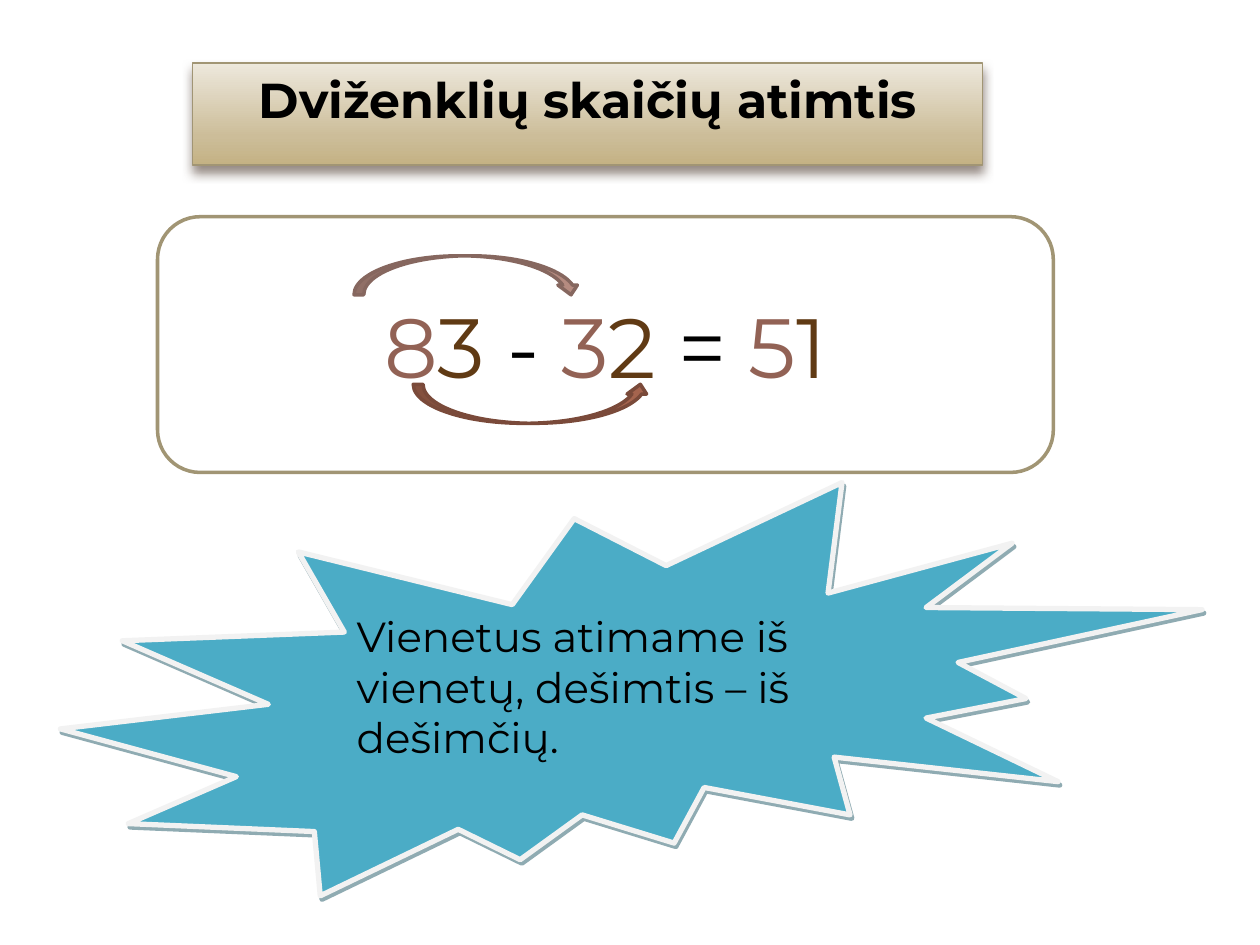
from lxml.etree import SubElement
from pptx import Presentation
from pptx.dml.color import RGBColor
from pptx.enum.shapes import MSO_SHAPE as SHAPE
from pptx.enum.text import MSO_ANCHOR as ANCHOR, MSO_AUTO_SIZE as AUTO_SIZE, PP_ALIGN as ALIGN
from pptx.oxml.ns import qn
from pptx.util import Pt

FONT = "Montserrat"
COLORS = {
    "text": "000000", "tens": "926255", "units": "603A14",
    "frame": "A19574", "panel": "FFFFFF",
    "burst": "4BACC6", "burst_line": "F2F2F2", "burst_shadow": "205867",
    "title_shadow": "4E3B30",
    "top_arrow": "B58B80", "top_arrow_line": "86675F",
    "bottom_arrow": "A5644E", "bottom_arrow_line": "7A4A3A",
}
TITLE_STOPS = [(0, "EDE8DC"), (72, "CCBD99"), (100, "C4B284")]

TITLE = [("Dviženklių skaičių atimtis", "text")]
RULE = [("Vienetus atimame iš vienetų, dešimtis – iš dešimčių.", "text")]
EQUATION = [("8", "tens"), ("3 ", "units"), ("- ", "text"), ("3", "tens"),
            ("2", "units"), (" = ", "text"), ("5", "tens"), ("1", "units")]

# left, top, width, height in points
TITLE_BOX = (110.16, 36, 451.44, 58.32)
BURST_BOX = (34.56, 275.76, 652.32, 236.16)
PANEL_BOX = (90, 123.84, 511.92, 146.16)
ARROWS = [
    (SHAPE.CURVED_DOWN_ARROW, (202.32, 146.16, 129.6, 22.32), "top_arrow"),
    (SHAPE.CURVED_UP_ARROW, (236.16, 219.6, 135.36, 22.32), "bottom_arrow"),
]


def rgb(name):
    return RGBColor.from_string(COLORS[name])


def set_line(sp, color, width):
    sp.line.color.rgb = rgb(color)
    sp.line.width = Pt(width)


def add_shape(slide, kind, box, fill, line, width):
    sp = slide.shapes.add_shape(kind, *map(Pt, box))
    sp.shadow.inherit = False
    sp.fill.solid()
    sp.fill.fore_color.rgb = rgb(fill)
    set_line(sp, line, width)
    return sp


def write(sp, runs, size, bold=False, align=ALIGN.LEFT, anchor=ANCHOR.TOP):
    """Fill the shape with one paragraph of (text, colour name) runs."""
    tf = sp.text_frame
    tf.word_wrap = True
    tf.auto_size = AUTO_SIZE.NONE
    tf.vertical_anchor = anchor
    p = tf.paragraphs[0]
    p.alignment = align
    for text, color in runs:
        r = p.add_run()
        r.text = text
        r.font.name = FONT
        r.font.size = Pt(size)
        r.font.bold = bold
        r.font.color.rgb = rgb(color)


def add_color(parent, value):
    return SubElement(parent, qn("a:srgbClr"), val=value)


def add_shadow(sp, color, alpha, blur, distance, angle):
    sp.shadow.inherit = False
    effects = sp._element.spPr.find(qn("a:effectLst"))
    shadow = SubElement(effects, qn("a:outerShdw"), blurRad=str(Pt(blur)),
                        dist=str(Pt(distance)), dir=str(angle * 60000),
                        algn="ctr", rotWithShape="0")
    SubElement(add_color(shadow, COLORS[color]), qn("a:alpha"), val=str(alpha * 1000))


def shape_title(sp, box, stops):
    """Give the title placeholder a rounded outline and a vertical gradient."""
    sp.left, sp.top, sp.width, sp.height = map(Pt, box)
    props = sp._element.spPr
    geometry = SubElement(props, qn("a:prstGeom"), prst="roundRect")
    SubElement(geometry, qn("a:avLst"))
    gradient = SubElement(props, qn("a:gradFill"), rotWithShape="1")
    stop_list = SubElement(gradient, qn("a:gsLst"))
    for position, color in stops:
        add_color(SubElement(stop_list, qn("a:gs"), pos=str(position * 1000)), color)
    SubElement(gradient, qn("a:lin"), ang="5400000", scaled="0")


def main():
    prs = Presentation()
    prs.slide_width, prs.slide_height = Pt(720), Pt(540)
    slide = prs.slides.add_slide(prs.slide_layouts[5])

    title = slide.shapes.title
    shape_title(title, TITLE_BOX, TITLE_STOPS)
    set_line(title, "frame", 0.79)
    add_shadow(title, "title_shadow", alpha=60, blur=6, distance=4, angle=90)
    write(title, TITLE, size=28, bold=True, align=ALIGN.CENTER)

    burst = add_shape(slide, SHAPE.EXPLOSION2, BURST_BOX, "burst", "burst_line", 3)
    add_shadow(burst, "burst_shadow", alpha=50, blur=0, distance=2.2, angle=63)
    write(burst, RULE, size=24)

    panel = add_shape(slide, SHAPE.ROUNDED_RECTANGLE, PANEL_BOX, "panel", "frame", 2)
    write(panel, EQUATION, size=48, align=ALIGN.CENTER, anchor=ANCHOR.MIDDLE)

    for kind, box, color in ARROWS:
        add_shape(slide, kind, box, color, f"{color}_line", 2)

    prs.save("out.pptx")


if __name__ == "__main__":
    main()
